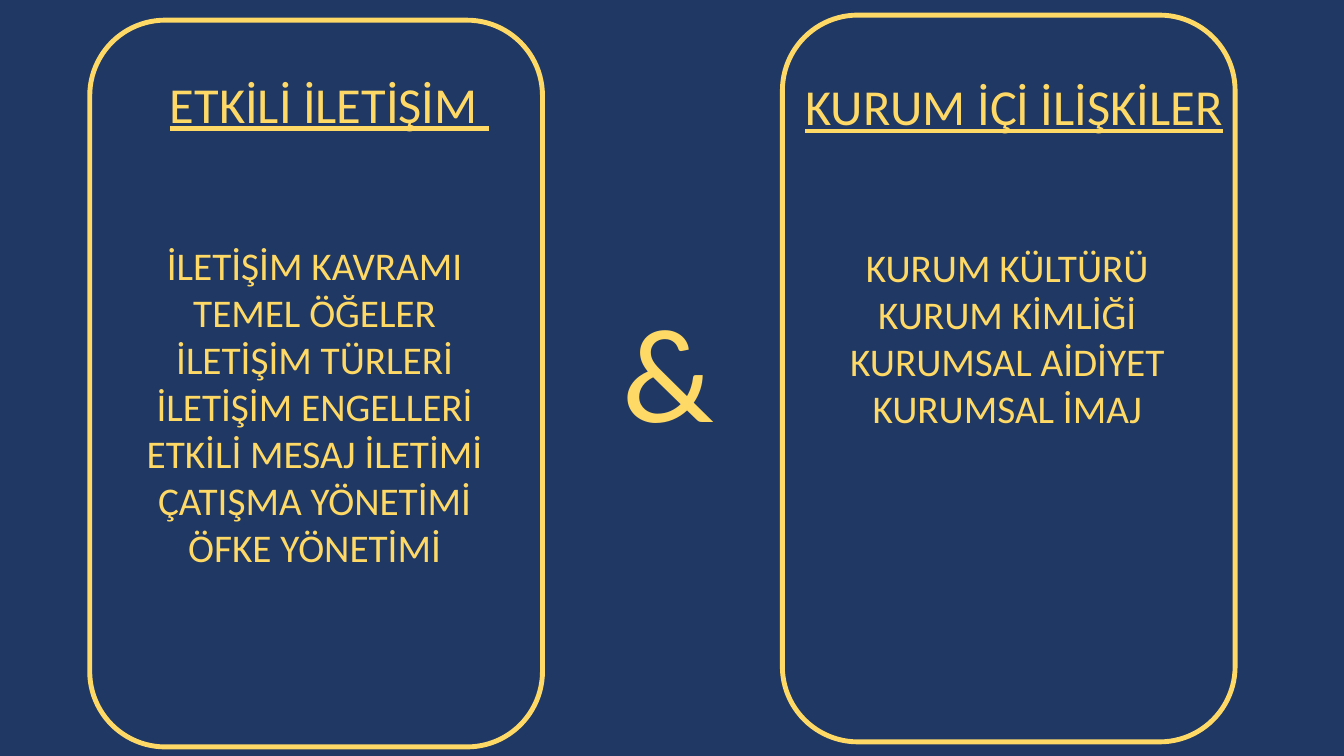
from dataclasses import dataclass
from pptx import Presentation
from pptx.dml.color import RGBColor
from pptx.enum.shapes import MSO_SHAPE
from pptx.enum.text import PP_ALIGN
from pptx.util import Inches, Pt

# Content: heading_box and text_top are in inches
COLUMNS = [
    {"heading": "ETKİLİ İLETİŞİM ",
     "topics": ["İLETİŞİM KAVRAMI", "TEMEL ÖĞELER", "İLETİŞİM TÜRLERİ",
                "İLETİŞİM ENGELLERİ", "ETKİLİ MESAJ İLETİMİ",
                "ÇATIŞMA YÖNETİMİ", "ÖFKE YÖNETİMİ"],
     "panel": (0.89, 0.2), "heading_left": 1.41, "heading_width": 3.72,
     "text_top": 0.68},
    {"heading": "KURUM İÇİ İLİŞKİLER",
     "topics": ["KURUM KÜLTÜRÜ", "KURUM KİMLİĞİ", "KURUMSAL AİDİYET",
                "KURUMSAL İMAJ"],
     "panel": (7.76, 0.15), "heading_left": 7.88, "heading_width": 4.36,
     "text_top": 0.7},
]
JOINER = "&"


@dataclass(frozen=True)
class Theme:
    background: RGBColor = RGBColor(0x20, 0x38, 0x64)
    gold: RGBColor = RGBColor(0xFF, 0xD9, 0x66)
    font: str = "Calibri"
    heading_size: int = 36
    topic_size: int = 28
    joiner_size: int = 96
    outline: float = 3.5


THEME = Theme()

# Layout in inches
SLIDE_WIDTH, SLIDE_HEIGHT = 13.33, 7.5
PANEL_WIDTH, PANEL_HEIGHT = 4.49, 7.21
TOPICS_INSET, TOPICS_WIDTH = 0.2, 4.06
TOPICS_DROP = 1.66
LINE_HEIGHT, BOX_PADDING = 0.47, 0.1
HEADING_HEIGHT = 0.71


def add_text(slide, lines, box, size, underline=None, wrap=True):
    shape = slide.shapes.add_textbox(*map(Inches, box))
    frame = shape.text_frame
    frame.word_wrap = wrap
    frame.text = "\n".join(lines)
    for paragraph in frame.paragraphs:
        paragraph.alignment = PP_ALIGN.CENTER
        for run in paragraph.runs:
            run.font.name = THEME.font
            run.font.size = Pt(size)
            run.font.underline = underline
            run.font.color.rgb = THEME.gold


def add_panel(slide, left, top):
    box = (left, top, PANEL_WIDTH, PANEL_HEIGHT)
    shape = slide.shapes.add_shape(MSO_SHAPE.ROUNDED_RECTANGLE, *map(Inches, box))
    shape.shadow.inherit = False
    shape.fill.background()
    shape.line.color.rgb = THEME.gold
    shape.line.width = Pt(THEME.outline)


def add_column(slide, column):
    left, top = column["panel"]
    add_panel(slide, left, top)
    heading_box = (column["heading_left"], column["text_top"],
                   column["heading_width"], HEADING_HEIGHT)
    add_text(slide, [column["heading"]], heading_box, THEME.heading_size,
             underline=True, wrap=False)
    topics_height = len(column["topics"]) * LINE_HEIGHT + BOX_PADDING
    topics_box = (left + TOPICS_INSET, column["text_top"] + TOPICS_DROP,
                  TOPICS_WIDTH, topics_height)
    add_text(slide, column["topics"], topics_box, THEME.topic_size)


def main():
    presentation = Presentation()
    presentation.slide_width = Inches(SLIDE_WIDTH)
    presentation.slide_height = Inches(SLIDE_HEIGHT)
    slide = presentation.slides.add_slide(
        presentation.slide_layouts.get_by_name("Blank"))
    slide.background.fill.solid()
    slide.background.fill.fore_color.rgb = THEME.background

    # Two panels with their headings and topics
    for column in COLUMNS:
        add_column(slide, column)

    # Sign between the panels
    add_text(slide, [JOINER], (5.94, 2.81, 1.38, 1.72), THEME.joiner_size)

    presentation.save("out.pptx")


if __name__ == "__main__":
    main()
